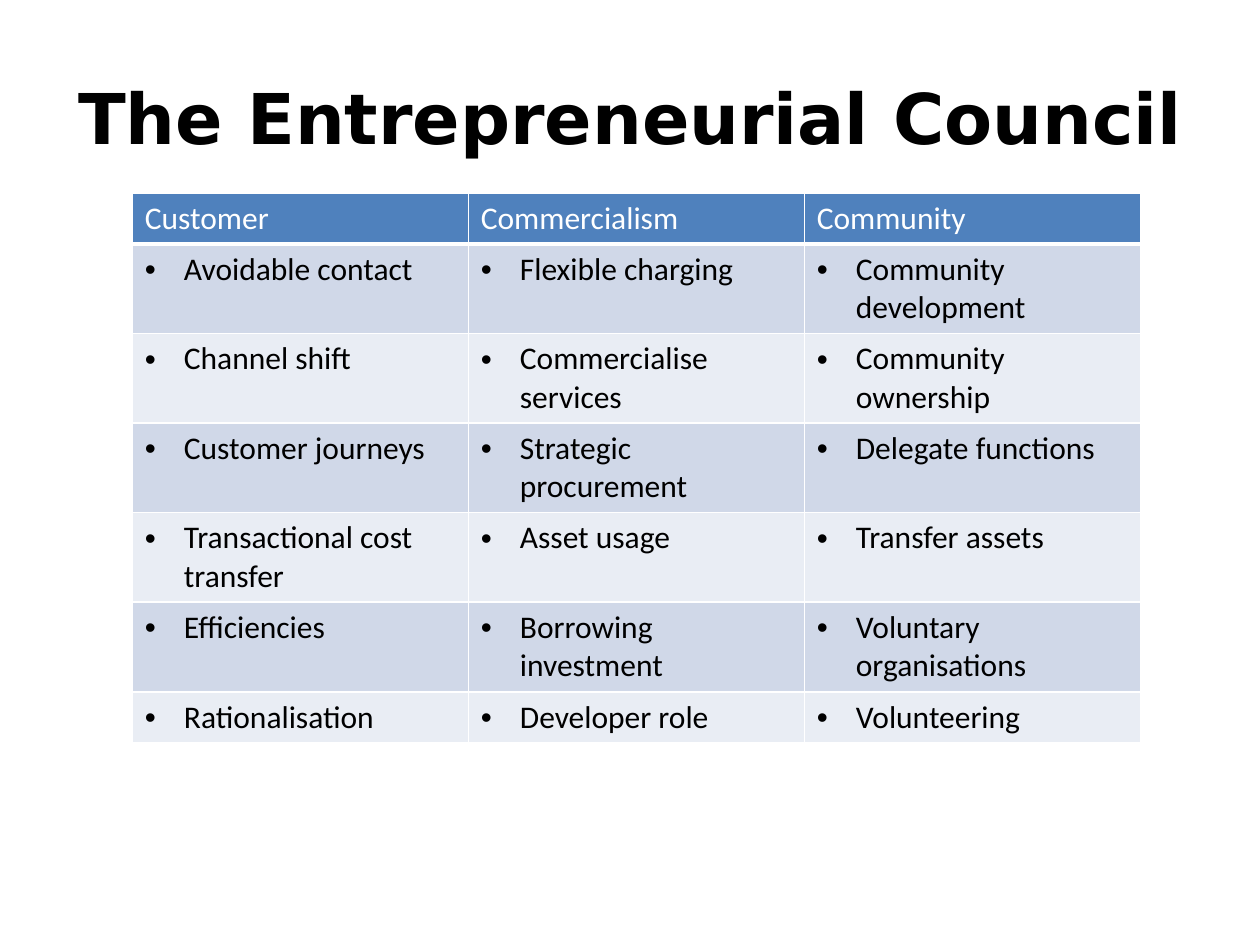
from typing import NamedTuple

from lxml import etree
from pptx import Presentation, util as u
from pptx.dml.color import RGBColor
from pptx.enum import text as t
from pptx.oxml.ns import qn

HUES = {
    "ink": "000000",
    "paper": "FFFFFF",
    "head": "4F81BD",
    "odd": "D0D8E8",
    "even": "E9EDF4",
}
WIDE, HIGH = u.Inches(10), u.Inches(7.5)
INDENT = u.Inches(0.31)


class Box(NamedTuple):
    """Left, top, width and height as shares of the slide."""
    x: float
    y: float
    w: float
    h: float

    def frame(self) -> tuple:
        return (int(self.x * WIDE), int(self.y * HIGH),
                int(self.w * WIDE), int(self.h * HIGH))


class Theme(NamedTuple):
    """One column of the table: a heading and its points."""
    name: str
    points: list


TITLE = Box(0.05, 0.04, 0.9, 0.167)
GRID = Box(0.105, 0.204, 0.8, 0.38)

THEMES = [
    Theme("Customer", [
        "Avoidable contact", "Channel shift", "Customer journeys",
        "Transactional cost transfer", "Efficiencies", "Rationalisation"]),
    Theme("Commercialism", [
        "Flexible charging", "Commercialise services",
        "Strategic procurement", "Asset usage", "Borrowing investment",
        "Developer role"]),
    Theme("Community", [
        "Community development", "Community ownership",
        "Delegate functions", "Transfer assets",
        "Voluntary organisations", "Volunteering"]),
]


def color(name: str) -> RGBColor:
    return RGBColor.from_string(HUES[name])


def write(frame, words: str, *, size=18, font="Calibri", hue="ink",
          bold=False, align=None, bullet=False) -> None:
    para = frame.paragraphs[0]
    para.alignment = align
    run = para.add_run()
    run.text = words
    run.font.size, run.font.name, run.font.bold = u.Pt(size), font, bold
    run.font.color.rgb = color(hue)
    if bullet:
        props = para._p.get_or_add_pPr()
        props.set("marL", str(INDENT))
        props.set("indent", str(-INDENT))
        etree.SubElement(props, qn("a:buFont"), typeface="Arial")
        etree.SubElement(props, qn("a:buChar"), char="•")


def edge(cell, low: int = 1) -> None:
    """White cell borders; low is the bottom width in points."""
    props = cell._tc.get_or_add_tcPr()
    for side, width in zip("LRTB", (1, 1, 1, low)):
        line = etree.SubElement(props, qn(f"a:ln{side}"), w=str(u.Pt(width)))
        fill = etree.SubElement(line, qn("a:solidFill"))
        etree.SubElement(fill, qn("a:srgbClr"), val=HUES["paper"])


def paint(cell, hue: str) -> None:
    cell.fill.solid()
    cell.fill.fore_color.rgb = color(hue)


def draw_title(slide, words: str) -> None:
    title = slide.shapes.title
    title.left, title.top, title.width, title.height = TITLE.frame()
    title.text_frame.vertical_anchor = t.MSO_ANCHOR.MIDDLE
    write(title.text_frame, words, size=40, font="DejaVu Sans", bold=True,
          align=t.PP_ALIGN.CENTER)


def draw_table(slide, themes: list[Theme]) -> None:
    count = 1 + len(themes[0].points)
    table = slide.shapes.add_table(count, len(themes), *GRID.frame()).table
    for col, theme in enumerate(themes):
        # Heading
        head = table.cell(0, col)
        edge(head, low=3)
        paint(head, "head")
        write(head.text_frame, theme.name, hue="paper")
        # Banded points
        for row, point in enumerate(theme.points, 1):
            cell = table.cell(row, col)
            edge(cell)
            paint(cell, "odd" if row % 2 else "even")
            write(cell.text_frame, point, bullet=True)


def main() -> None:
    deck = Presentation()
    deck.slide_width, deck.slide_height = WIDE, HIGH
    slide = deck.slides.add_slide(deck.slide_layouts.get_by_name("Title Only"))
    draw_title(slide, "The Entrepreneurial Council")
    draw_table(slide, THEMES)
    deck.save("out.pptx")


if __name__ == "__main__":
    main()
